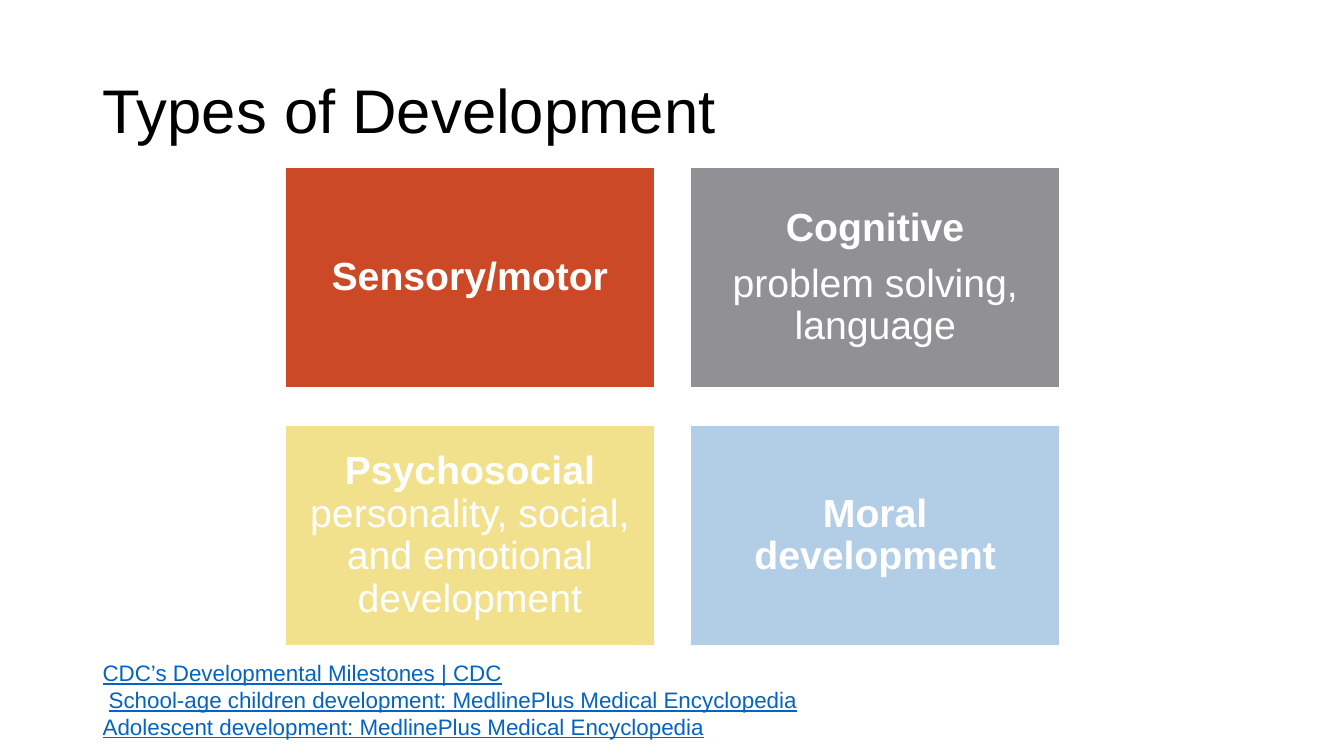
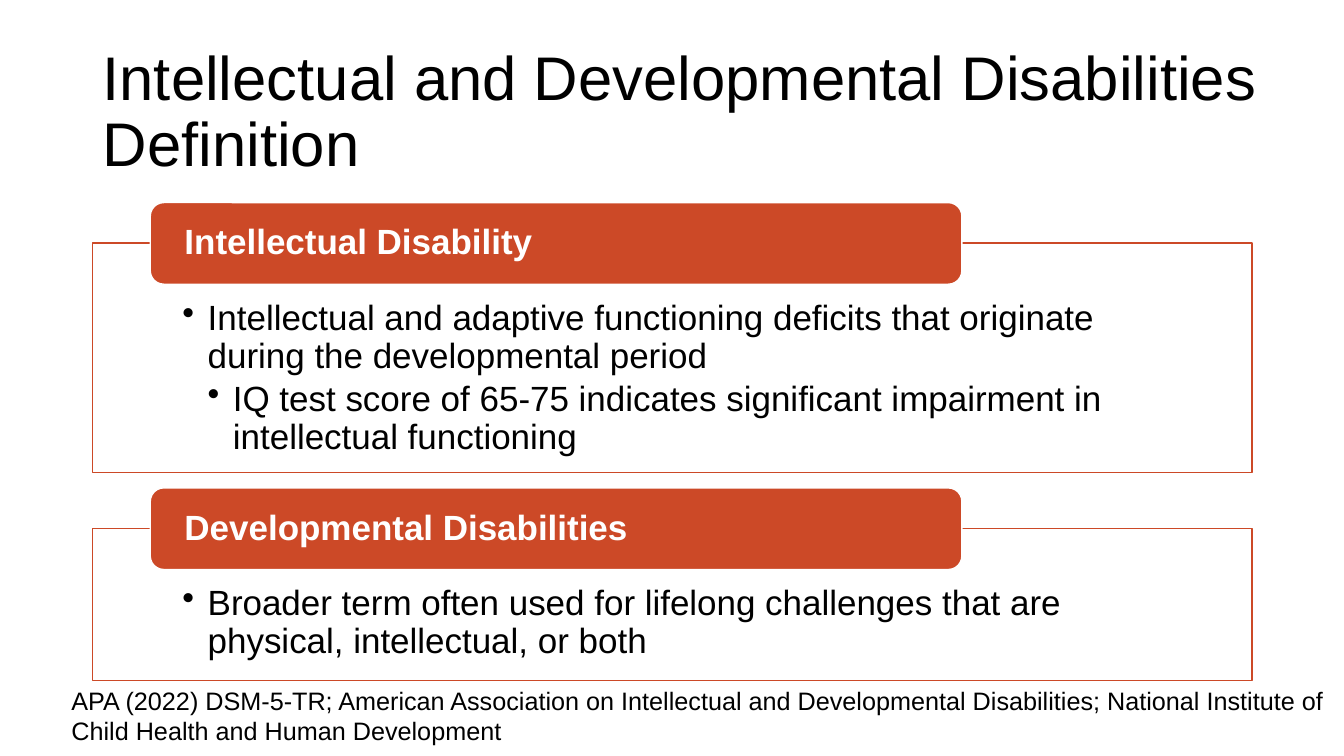
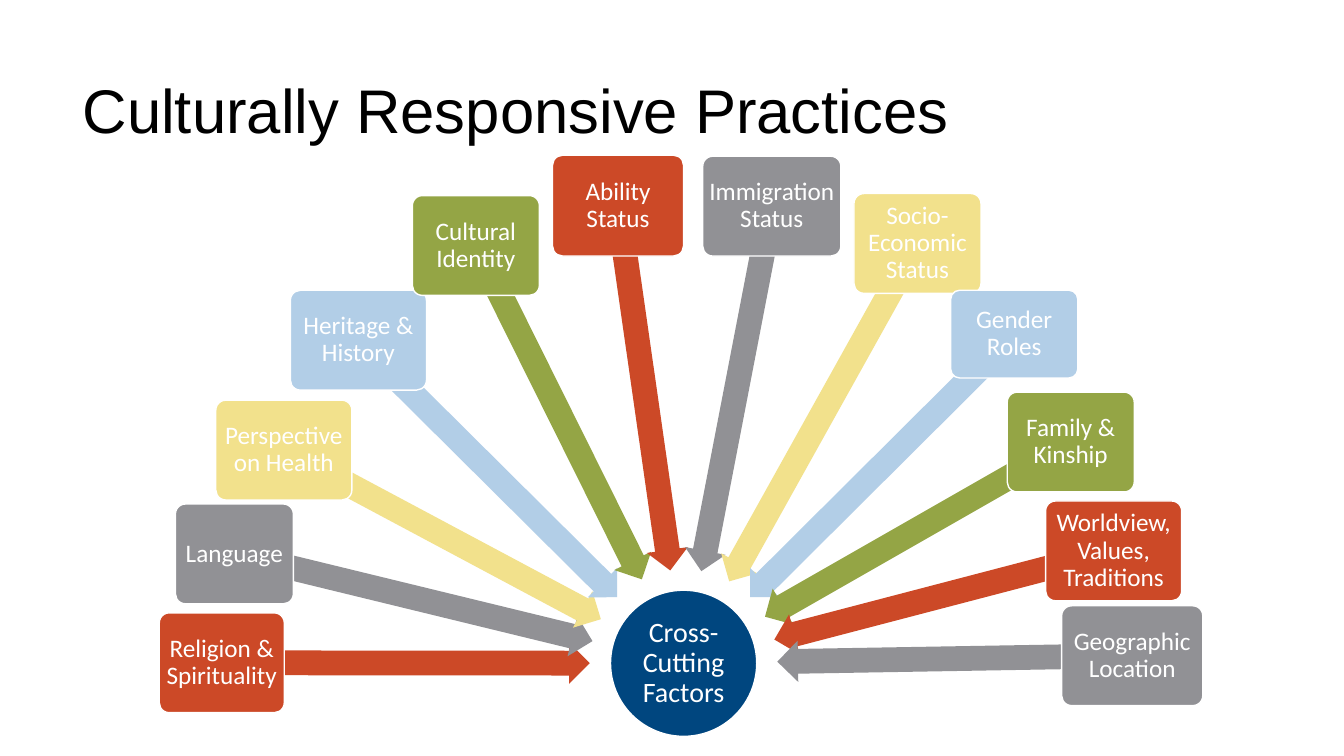
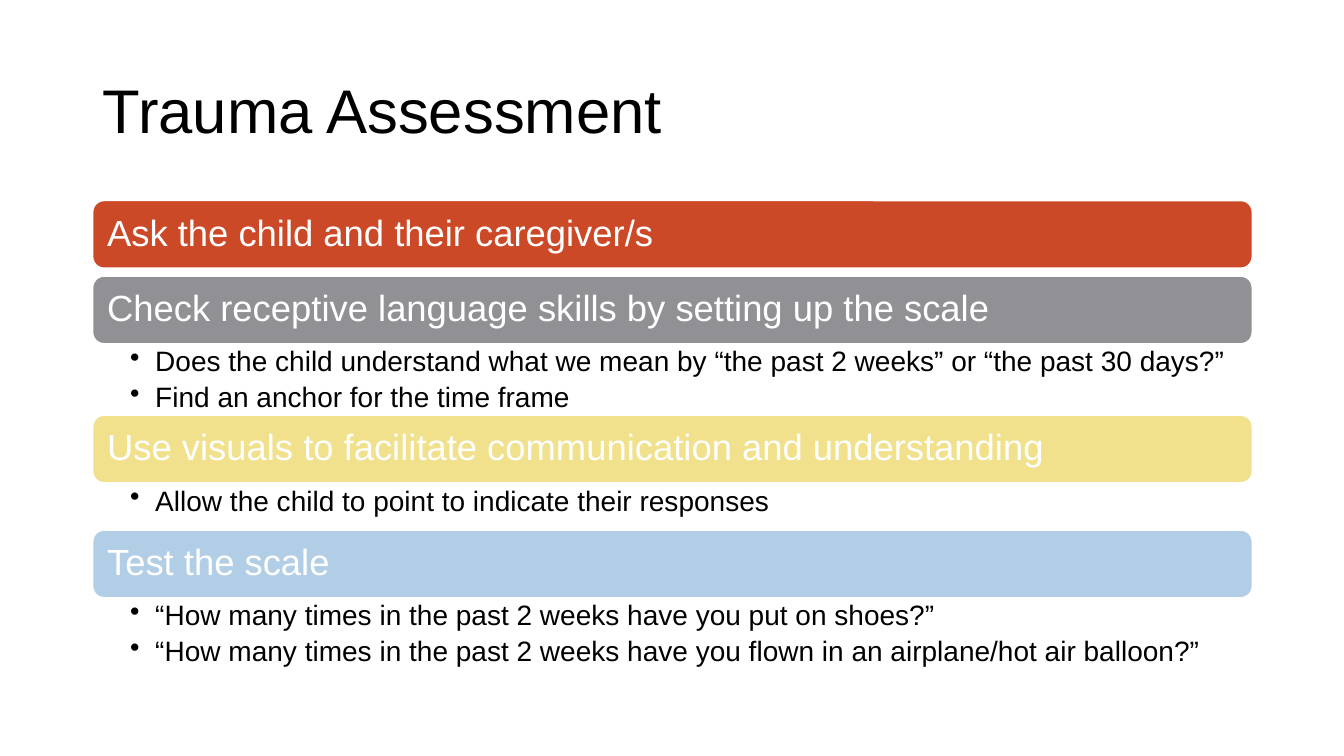
import math

from lxml import etree
from pptx import Presentation
from pptx.dml.color import RGBColor
from pptx.enum.shapes import MSO_SHAPE
from pptx.enum.text import MSO_ANCHOR, PP_ALIGN
from pptx.oxml.ns import qn
from pptx.util import Inches, Pt

RECT, ROUNDED = MSO_SHAPE.RECTANGLE, MSO_SHAPE.ROUNDED_RECTANGLE
ELLIPSE, LEFT_ARROW = MSO_SHAPE.OVAL, MSO_SHAPE.LEFT_ARROW
TOP, MIDDLE = MSO_ANCHOR.TOP, MSO_ANCHOR.MIDDLE
LEFT, CENTER = PP_ALIGN.LEFT, PP_ALIGN.CENTER

BLACK, WHITE, LINK = "000000", "FFFFFF", "0563C1"
RED, GRAY, YELLOW, BLUE = "CC4927", "919195", "F2E18C", "B2CEE7"
GREEN, NAVY = "94A545", "00467F"
HEADING, LABEL = "Arial", "Calibri"


def add_box(slide, kind, at, fill, line=WHITE):
    shape = slide.shapes.add_shape(kind, *(Inches(v) for v in at))
    shape.shadow.inherit = False
    shape.fill.solid()
    shape.fill.fore_color.rgb = RGBColor.from_string(fill)
    if line:
        shape.line.color.rgb = RGBColor.from_string(line)
        shape.line.width = Pt(1)
    else:
        shape.line.fill.background()
    return shape


def write(shape, texts, size, color, font=HEADING, align=LEFT, anchor=MIDDLE,
          insets=(0.1, 0.05, 0.1, 0.05), spacing=0.9, gap=0, bullets=False):
    """Fill a shape with paragraphs; **text** is bold, and with bullets each tab is a level."""
    frame = shape.text_frame
    frame.word_wrap = True
    frame.vertical_anchor = anchor
    frame.margin_left, frame.margin_top, frame.margin_right, frame.margin_bottom = (
        Inches(v) for v in insets)
    for i, text in enumerate(texts):
        paragraph = frame.add_paragraph() if i else frame.paragraphs[0]
        paragraph.alignment = align
        paragraph.line_spacing = spacing
        if i and gap:
            paragraph.space_before = Pt(gap)
        if bullets:
            level = text.count("\t") + 1
            text = text.strip("\t")
            properties = paragraph._p.get_or_add_pPr()
            properties.set("marL", str(Inches(0.25 * level)))
            properties.set("indent", str(Inches(-0.25)))
            etree.SubElement(properties, qn("a:buChar")).set("char", "•")
        for j, part in enumerate(text.split("**")):
            if part:
                run = paragraph.add_run()
                run.text = part
                run.font.name = font
                run.font.size = Pt(size)
                run.font.bold = j % 2 == 1
                run.font.color.rgb = RGBColor.from_string(color)


prs = Presentation()
prs.slide_width, prs.slide_height = Inches(13.33), Inches(7.5)

slides = []
for title, at in [
    ("Types of Development", (0.92, 0.4, 11.5, 1.45)),
    ("Intellectual and Developmental Disabilities Definition", (0.92, 0.4, 11.86, 1.45)),
    ("Culturally Responsive Practices", (0.72, 0.48, 11.22, 1.3)),
    ("Trauma Assessment", (0.92, 0.4, 11.5, 1.45)),
]:
    slide = prs.slides.add_slide(prs.slide_layouts[6])
    write(slide.shapes.add_textbox(*(Inches(v) for v in at)), [title], 44, BLACK)
    slides.append(slide)
types, disabilities, culture, trauma = slides

# Types of development
for i, (fill, texts) in enumerate([
    (RED, ["**Sensory/motor**"]),
    (GRAY, ["**Cognitive**", "problem solving, language"]),
    (YELLOW, ["**Psychosocial** personality, social, and emotional development"]),
    (BLUE, ["**Moral development**"]),
]):
    row, column = divmod(i, 2)
    card = add_box(types, RECT, (2.83 + 4.02 * column, 1.66 + 2.56 * row, 3.66, 2.19), fill)
    write(card, texts, 28, WHITE, align=CENTER, insets=[0.12] * 4, gap=9.8)

references = types.shapes.add_textbox(Inches(0.92), Inches(6.49), Inches(9.86), Inches(0.94))
write(references, [
    "CDC’s Developmental Milestones | CDC",
    "School-age children development: MedlinePlus Medical Encyclopedia",
    "Adolescent development: MedlinePlus Medical Encyclopedia",
], 16, LINK, anchor=TOP, spacing=1.0)
for paragraph in references.text_frame.paragraphs:
    paragraph.runs[0].font.underline = True
references.text_frame.paragraphs[1]._p.get_or_add_pPr().set("marL", str(Inches(0.06)))

# Definitions
for top, height, term, points in [
    (2.41, 2.28, "Intellectual Disability", [
        "Intellectual and adaptive functioning deficits that originate during the "
        "developmental period",
        "\tIQ test score of 65-75 indicates significant impairment in intellectual functioning",
    ]),
    (5.24, 1.51, "Developmental Disabilities", [
        "Broader term often used for lifelong challenges that are physical, intellectual, or both",
    ]),
]:
    panel = add_box(disabilities, RECT, (0.92, top, 11.5, height), WHITE, RED)
    write(panel, points, 25, BLACK, anchor=TOP, insets=(0.89, 0.57, 0.89, 0.19),
          gap=3.75, bullets=True)
    tab = add_box(disabilities, ROUNDED, (1.49, top - 0.4, 8.05, 0.81), RED)
    write(tab, [f"**{term}**"], 25, WHITE, insets=(0.3, 0, 0.3, 0))

sources = disabilities.shapes.add_textbox(Inches(0.61), Inches(6.75), Inches(12.72), Inches(0.71))
write(sources, [
    "APA (2022) DSM-5-TR; American Association on Intellectual and Developmental Disabilities; "
    "National Institute of Child Health and Human Development",
], 18, BLACK, anchor=TOP, spacing=1.0)

# Cross-cutting factors: each arrow runs from a box centre towards the hub
HUB_X, HUB_Y, HUB_SIZE = 6.78, 6.58, 1.45
ARROW_STOP, ARROW_HEIGHT = 0.93, 0.41
hub = add_box(culture, ELLIPSE,
              (HUB_X - HUB_SIZE / 2, HUB_Y - HUB_SIZE / 2, HUB_SIZE, HUB_SIZE), NAVY)
write(hub, ["Cross-Cutting Factors"], 20, WHITE, LABEL, CENTER, insets=[0.01] * 4)

factor_colors = [RED, GRAY, YELLOW, BLUE, GREEN]
for i, (factor, left, top, width, height) in enumerate([
    ("Religion & Spirituality", 1.58, 6.08, 1.24, 0.99),
    ("Language", 1.74, 5, 1.17, 0.99),
    ("Perspective on Health", 2.14, 3.97, 1.35, 0.99),
    ("Heritage & History", 2.88, 2.88, 1.35, 0.99),
    ("Cultural Identity", 4.09, 1.94, 1.26, 0.99),
    ("Ability Status", 5.48, 1.54, 1.3, 1),
    ("Immigration Status", 6.97, 1.55, 1.37, 0.99),
    ("Socio-Economic Status", 8.47, 1.92, 1.26, 0.99),
    ("Gender Roles", 9.43, 2.88, 1.26, 0.87),
    ("Family & Kinship", 9.99, 3.89, 1.26, 0.99),
    ("Worldview, Values, Traditions", 10.37, 4.97, 1.35, 0.99),
    ("Geographic Location", 10.53, 6.01, 1.4, 0.99),
]):
    fill = factor_colors[i % len(factor_colors)]
    x, y = left + width / 2, top + height / 2
    angle = math.atan2(HUB_Y - y, HUB_X - x)
    length = math.hypot(HUB_X - x, HUB_Y - y) - ARROW_STOP
    middle_x = x + length / 2 * math.cos(angle)
    middle_y = y + length / 2 * math.sin(angle)
    arrow = add_box(culture, LEFT_ARROW, (middle_x - length / 2, middle_y - ARROW_HEIGHT / 2,
                                          length, ARROW_HEIGHT), fill, None)
    arrow.adjustments[0], arrow.adjustments[1] = 0.6, 0.5
    arrow.rotation = math.degrees(angle) + 180
    box = add_box(culture, ROUNDED, (left, top, width, height), fill)
    box.adjustments[0] = 0.1
    write(box, [factor], 18, WHITE, LABEL, CENTER, insets=(0.02, 0.04, 0.02, 0.04))

# Trauma assessment
BAR_HEIGHT = 0.67
top = 1.99
for fill, step, space_below, details in [
    (RED, "Ask the child and their caregiver/s", 0.08, []),
    (GRAY, "Check receptive language skills by setting up the scale", 0.71, [
        "Does the child understand what we mean by “the past 2 weeks” or “the past 30 days?”",
        "Find an anchor for the time frame",
    ]),
    (YELLOW, "Use visuals to facilitate communication and understanding", 0.47, [
        "Allow the child to point to indicate their responses",
    ]),
    (BLUE, "Test the scale", 0.71, [
        "“How many times in the past 2 weeks have you put on shoes?”",
        "“How many times in the past 2 weeks have you flown in an airplane/hot air balloon?”",
    ]),
]:
    bar = add_box(trauma, ROUNDED, (0.92, top, 11.5, BAR_HEIGHT), fill)
    write(bar, [step], 26, WHITE, insets=[0.11] * 4)
    top += BAR_HEIGHT
    if details:
        notes = trauma.shapes.add_textbox(Inches(0.92), Inches(top), Inches(11.5),
                                          Inches(space_below))
        write(notes, details, 20, BLACK, anchor=TOP, insets=(0.37, 0.04, 0.2, 0.04),
              gap=4, bullets=True)
    top += space_below

prs.save("out.pptx")
